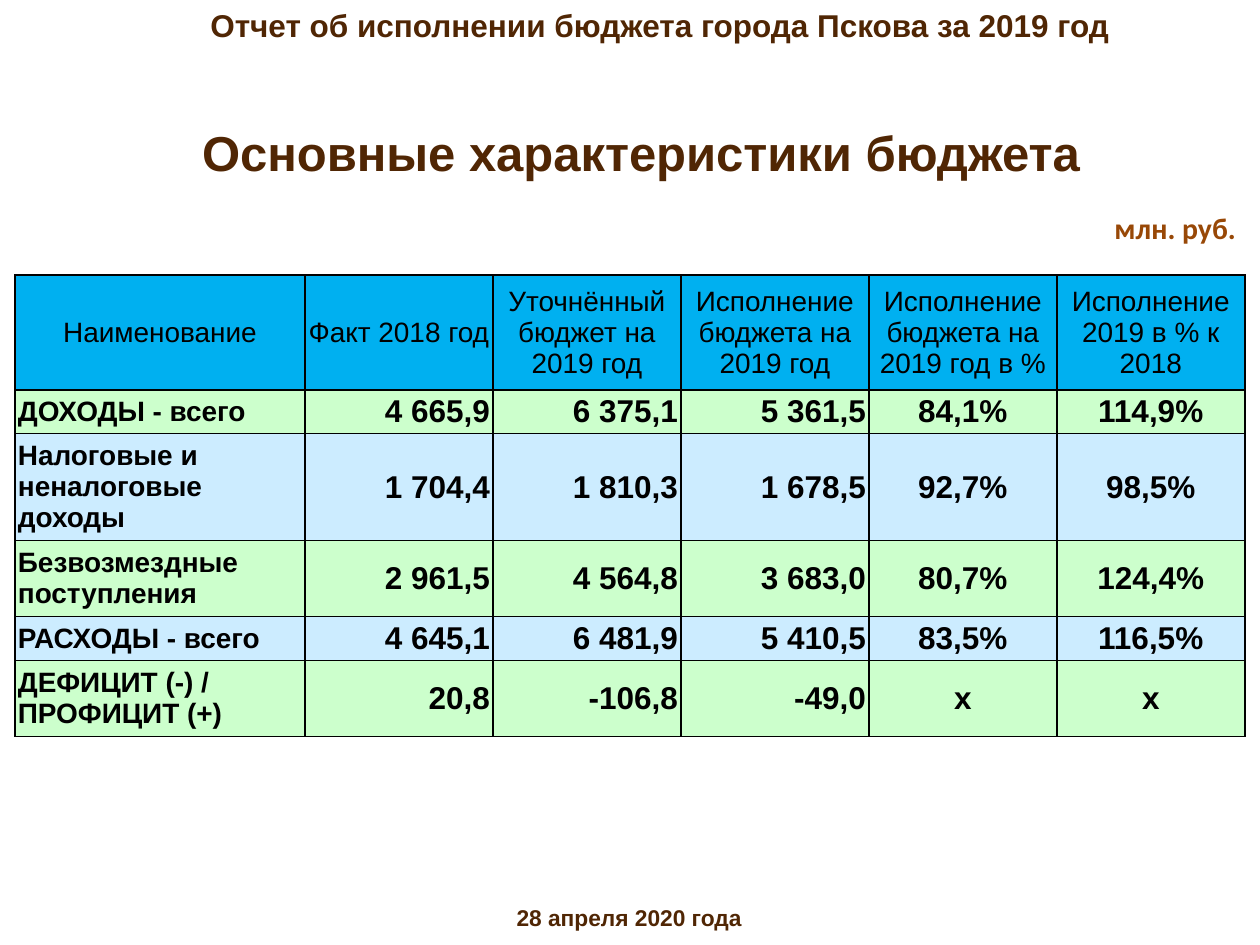
from dataclasses import dataclass

from lxml import etree
from pptx import Presentation
from pptx import util as u
from pptx.dml import color
from pptx.enum import text
from pptx.oxml import ns

EMU_PER_PX = 914400 / 126
COLORS = {
    "brown": "502604", "rust": "984807", "black": "000000",
    "header": "00B0F0", "green": "CCFFCC", "blue": "CCECFF",
}
LEFT, CENTER, RIGHT = text.PP_ALIGN.LEFT, text.PP_ALIGN.CENTER, text.PP_ALIGN.RIGHT


@dataclass(frozen=True)
class Style:
    size: int
    bold: bool = True
    color: str = "black"
    font: str = "Arial"
    align: text.PP_ALIGN = LEFT


@dataclass(frozen=True)
class Label:
    words: str
    left: int
    top: int
    width: int
    height: int
    style: Style
    wrap: bool = True
    indent: int = 0


@dataclass(frozen=True)
class Row:
    height: int
    values: tuple[str, ...]


LABELS = (
    Label("Отчет об исполнении бюджета города Пскова за 2019 год",
          0, 0, 1260, 50, Style(18, color="brown"), indent=198),
    Label("28 апреля 2020 года", -1, 898, 1260, 40,
          Style(13, color="brown", align=CENTER)),
    Label("Основные характеристики бюджета", 184, 116, 914, 72,
          Style(28, color="brown", align=CENTER), wrap=False),
    Label("млн. руб.", 1102, 204, 147, 49,
          Style(17, color="rust", font="Calibri"), wrap=False),
)
ROWS = (
    Row(115, ("Наименование", "Факт 2018 год", "Уточнённый бюджет на 2019 год",
              "Исполнение бюджета на 2019 год", "Исполнение бюджета на 2019 год в %",
              "Исполнение 2019 в % к 2018")),
    Row(43, ("ДОХОДЫ - всего", "4 665,9", "6 375,1", "5 361,5", "84,1%", "114,9%")),
    Row(105, ("Налоговые и неналоговые доходы", "1 704,4", "1 810,3", "1 678,5",
              "92,7%", "98,5%")),
    Row(76, ("Безвозмездные поступления", "2 961,5", "4 564,8", "3 683,0",
             "80,7%", "124,4%")),
    Row(43, ("РАСХОДЫ - всего", "4 645,1", "6 481,9", "5 410,5", "83,5%", "116,5%")),
    Row(76, ("ДЕФИЦИТ (-) / ПРОФИЦИТ (+)", "20,8", "-106,8", "-49,0", "x", "x")),
)
COLUMN_WIDTHS = (290,) + (188,) * 5
HEADER_STYLE = Style(16, bold=False, align=CENTER)
COLUMN_STYLES = (Style(16),) + (Style(18, align=RIGHT),) * 3 + (Style(18, align=CENTER),) * 2


def px(length: int) -> u.Emu:
    return u.Emu(round(length * EMU_PER_PX))


def rgb(name: str) -> color.RGBColor:
    return color.RGBColor.from_string(COLORS[name])


def write(para, words: str, style: Style) -> None:
    para.alignment = style.align
    span = para.add_run()
    span.text = words
    span.font.name = style.font
    span.font.size = u.Pt(style.size)
    span.font.bold = style.bold
    span.font.color.rgb = rgb(style.color)


def add_label(page, label: Label) -> None:
    box = page.shapes.add_textbox(
        px(label.left), px(label.top), px(label.width), px(label.height))
    box.text_frame.word_wrap = label.wrap
    para = box.text_frame.paragraphs[0]
    if label.indent:
        para._p.get_or_add_pPr().set("marL", str(px(label.indent)))
    write(para, label.words, label.style)


def add_borders(cell, top: float, bottom: float) -> None:
    properties = cell._tc.get_or_add_tcPr()
    widths = {"lnL": 1, "lnR": 1, "lnT": top, "lnB": bottom}
    for position, (tag, width) in enumerate(widths.items()):
        line = etree.Element(ns.qn(f"a:{tag}"), w=str(u.Pt(width)))
        fill = etree.SubElement(line, ns.qn("a:solidFill"))
        etree.SubElement(fill, ns.qn("a:srgbClr"), val=COLORS["black"])
        properties.insert(position, line)


def fill_cell(cell, words: str, style: Style, fill: str) -> None:
    cell.margin_left = cell.margin_right = cell.margin_top = cell.margin_bottom = px(3)
    cell.vertical_anchor = text.MSO_ANCHOR.MIDDLE
    cell.fill.solid()
    cell.fill.fore_color.rgb = rgb(fill)
    write(cell.text_frame.paragraphs[0], words, style)


def add_budget_table(page, rows: tuple[Row, ...]) -> None:
    frame = page.shapes.add_table(
        len(rows), len(COLUMN_WIDTHS), px(15), px(275),
        px(sum(COLUMN_WIDTHS)), px(sum(row.height for row in rows)))
    table = frame.table
    table.first_row = table.horz_banding = False
    for column, width in zip(table.columns, COLUMN_WIDTHS):
        column.width = px(width)
    for index, row in enumerate(rows):
        table.rows[index].height = px(row.height)
        header = index == 0
        fill = "header" if header else ("blue", "green")[index % 2]
        for number, words in enumerate(row.values):
            cell = table.cell(index, number)
            style = HEADER_STYLE if header else COLUMN_STYLES[number]
            fill_cell(cell, words, style, fill)
            add_borders(cell, 1 if index < 2 else 0.5, 1 if header else 0.5)


def main() -> None:
    """Build the budget summary slide."""
    deck = Presentation()
    deck.slide_width, deck.slide_height = px(1260), px(945)
    page = deck.slides.add_slide(deck.slide_layouts[6])
    for label in LABELS:
        add_label(page, label)
    add_budget_table(page, ROWS)
    deck.save("out.pptx")


if __name__ == "__main__":
    main()
